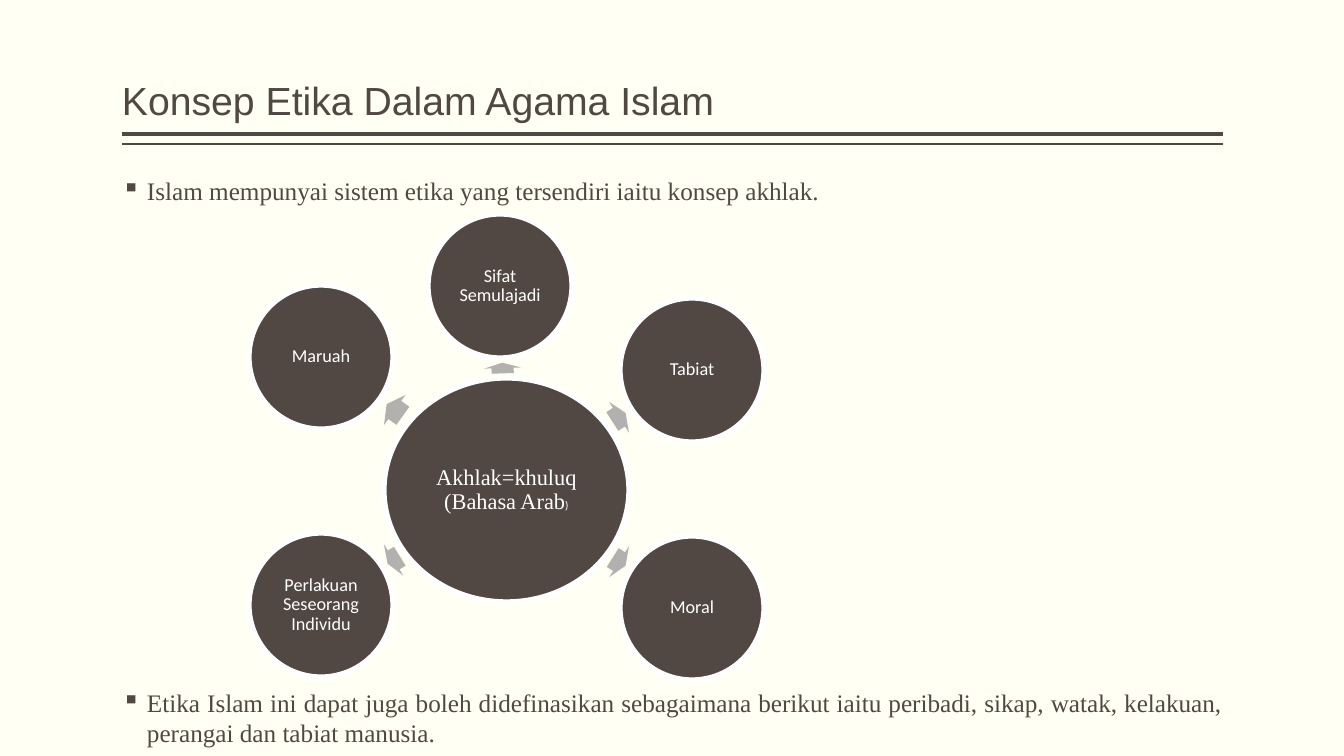
import math

from lxml import etree
from pptx import Presentation
from pptx.dml.color import RGBColor
from pptx.enum import shapes, text
from pptx.oxml import ns
from pptx.util import Emu, Pt

# Content
TITLE = "Konsep Etika Dalam Agama Islam"
BULLETS = [  # top, height, alignment, wording
    (170, 40, text.PP_ALIGN.LEFT,
     "Islam mempunyai sistem etika yang tersendiri iaitu konsep akhlak."),
    (682, 70, text.PP_ALIGN.JUSTIFY,
     "Etika Islam ini dapat juga boleh didefinasikan sebagaimana berikut iaitu "
     "peribadi, sikap, watak, kelakuan, perangai dan tabiat manusia."),
]
HUB = (384, 378, 245, 224)
HUB_RUNS = [("Akhlak=khuluq (Bahasa Arab", 16, "Times New Roman"), (")", 8, "Calibri")]
NODES = [  # left, top, wording
    (428, 214, "Sifat Semulajadi"),
    (620, 298, "Tabiat"),
    (620, 536, "Moral"),
    (249, 533, "Perlakuan Seseorang Individu"),
    (249, 285, "Maruah"),
]
RULES = [(134, 3), (144, 1)]  # y, weight in points

# Measures and colours
LEFT, WIDTH = 122, 1101
NODE, ARROW_WIDTH, ARROW_SHARE = 144, 37, 0.53
BROWN, GREY, WHITE, CREAM = "514843", "B3B1B0", "FFFFFF", "FFFFF3"


def px(n):
    return Emu(round(n * 914400 / 100.8))


def color(hex_code):
    return RGBColor.from_string(hex_code)


def add_runs(p, runs, hex_code):
    for wording, size, face in runs:
        r = p.add_run()
        r.text = wording
        r.font.size, r.font.name = Pt(size), face
        r.font.color.rgb = color(hex_code)


def set_frame(tf, anchor, side, end):
    tf.word_wrap = True
    tf.vertical_anchor = anchor
    tf.margin_left = tf.margin_right = px(side)
    tf.margin_top = tf.margin_bottom = px(end)
    return tf.paragraphs[0]


def add_text(box, anchor, runs):
    sp = slide.shapes.add_textbox(*map(px, box))
    p = set_frame(sp.text_frame, anchor, 0, 5)
    add_runs(p, runs, BROWN)
    return p


def add_filled(kind, box, fill):
    sp = slide.shapes.add_shape(kind, *map(px, box))
    sp.shadow.inherit = False
    sp.fill.solid()
    sp.fill.fore_color.rgb = color(fill)
    return sp


def add_circle(box, runs):
    sp = add_filled(shapes.MSO_SHAPE.OVAL, box, BROWN)
    sp.line.color.rgb = color(WHITE)
    sp.line.width = Pt(3.78)
    p = set_frame(sp.text_frame, text.MSO_ANCHOR.MIDDLE, 2, 2)
    p.alignment = text.PP_ALIGN.CENTER
    p.line_spacing = 0.9
    add_runs(p, runs, WHITE)


def add_arrow(left, top):
    """Centre an arrow in the gap between the hub and one node."""
    hub_x, hub_y = HUB[0] + HUB[2] / 2, HUB[1] + HUB[3] / 2
    dx, dy = left + NODE / 2 - hub_x, top + NODE / 2 - hub_y
    distance, angle = math.hypot(dx, dy), math.atan2(dy, dx)
    cos, sin = math.cos(angle), math.sin(angle)
    hub_edge = 1 / math.hypot(cos / (HUB[2] / 2), sin / (HUB[3] / 2))
    node_edge = distance - NODE / 2
    length = (node_edge - hub_edge) * ARROW_SHARE
    middle = (hub_edge + node_edge) / 2
    x, y = hub_x + middle * cos, hub_y + middle * sin
    box = (x - length / 2, y - ARROW_WIDTH / 2, length, ARROW_WIDTH)
    sp = add_filled(shapes.MSO_SHAPE.RIGHT_ARROW, box, GREY)
    sp.line.fill.background()
    sp.adjustments[0], sp.adjustments[1] = 0.6, 0.5
    sp.rotation = math.degrees(angle) % 360


prs = Presentation()
prs.slide_width, prs.slide_height = px(1344), px(756)
slide = prs.slides.add_slide(prs.slide_layouts[6])
slide.background.fill.solid()
slide.background.fill.fore_color.rgb = color(CREAM)

# Title and double rule
p = add_text((LEFT, 8, WIDTH, 121), text.MSO_ANCHOR.BOTTOM, [(TITLE, 28, "Arial")])
p.line_spacing = 0.9
for y, weight in RULES:
    line = slide.shapes.add_connector(
        shapes.MSO_CONNECTOR.STRAIGHT, px(LEFT), px(y), px(LEFT + WIDTH), px(y))
    line.line.color.rgb = color(BROWN)
    line.line.width = Pt(weight)
    etree.SubElement(line._element.spPr, ns.qn("a:effectLst"))

# Bulleted statements
for top, height, alignment, wording in BULLETS:
    p = add_text((LEFT, top, WIDTH, height), text.MSO_ANCHOR.TOP,
                 [(wording, 18, "Times New Roman")])
    p.alignment = alignment
    pPr = p._p.get_or_add_pPr()
    pPr.set("marL", str(px(25)))
    pPr.set("indent", str(px(-25)))
    etree.SubElement(pPr, ns.qn("a:buChar")).set("char", "▪")

# Radial diagram
add_circle(HUB, HUB_RUNS)
for left, top, wording in NODES:
    add_arrow(left, top)
    add_circle((left, top, NODE, NODE), [(wording, 13, "Calibri")])

prs.save("out.pptx")
